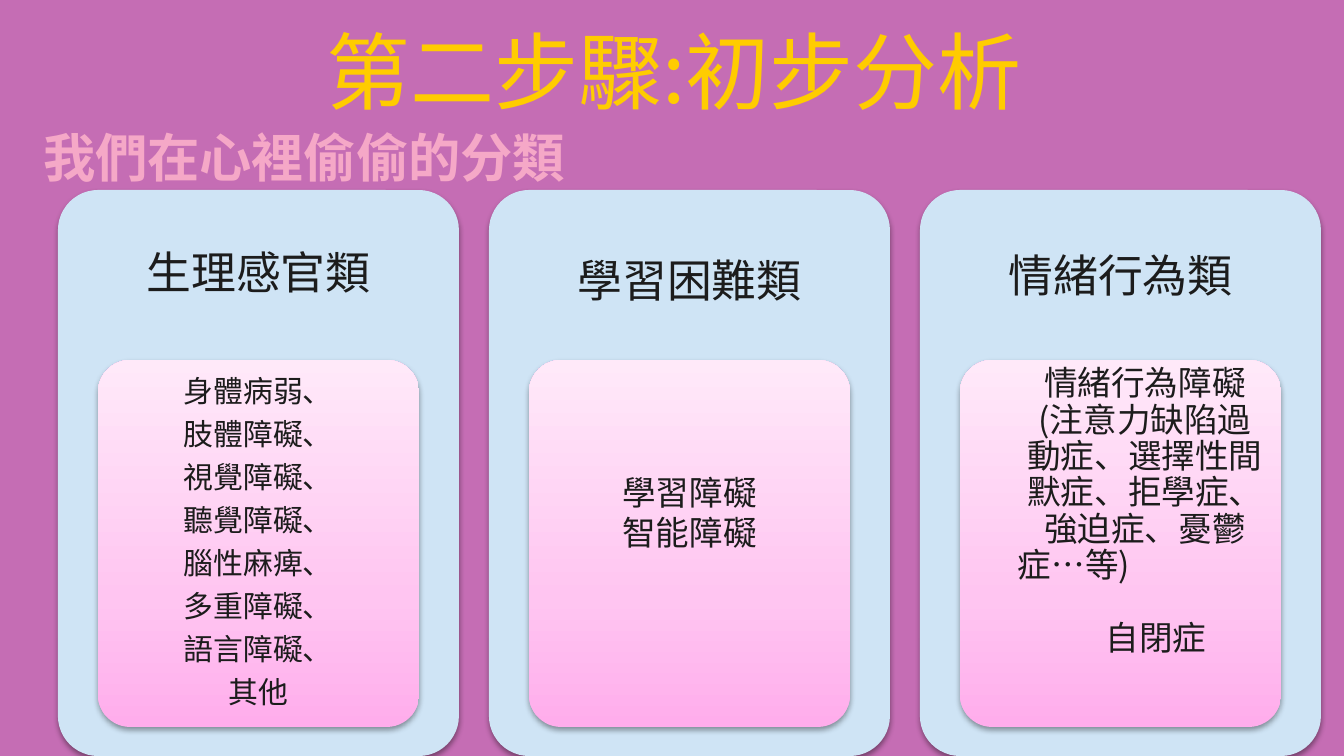
from copy import deepcopy

from lxml import etree
from pptx import Presentation
from pptx.dml.color import RGBColor
from pptx.enum.shapes import MSO_SHAPE
from pptx.enum.text import MSO_ANCHOR, MSO_AUTO_SIZE, PP_ALIGN
from pptx.oxml import parse_xml
from pptx.oxml.ns import qn
from pptx.util import Pt

ROUNDED = MSO_SHAPE.ROUNDED_RECTANGLE
TOP = MSO_ANCHOR.TOP
LEFT, CENTER = PP_ALIGN.LEFT, PP_ALIGN.CENTER

PX = 914400 / 134.4
FONT = "Noto Sans CJK SC"
INK = "1C1C1C"
SHADOW = (
    '<a:effectLst xmlns:a="http://schemas.openxmlformats.org/drawingml/2006/main">'
    '<a:outerShdw blurRad="39370" dist="20320" dir="5400000" rotWithShape="0">'
    '<a:srgbClr val="000000"><a:alpha val="38000"/></a:srgbClr>'
    '</a:outerShdw></a:effectLst>'
)


def px(*lengths):
    return [round(n * PX) for n in lengths]


def write(sp, lines, size, pitch, color=INK, align=CENTER, bold=False,
          wrap=True, left=0, top=0):
    """Fill a shape with paragraphs; pitch is the line height in points."""
    tf = sp.text_frame
    tf.word_wrap = wrap
    tf.auto_size = MSO_AUTO_SIZE.NONE
    tf.vertical_anchor = TOP
    tf.margin_left, tf.margin_top = px(left, top)
    tf.margin_right = tf.margin_bottom = 0
    tf.text = "\n".join(lines)
    for p in tf.paragraphs:
        p.alignment = align
        p.line_spacing = Pt(pitch)
        p.space_before = p.space_after = Pt(0)
        for r in p.runs:
            r.font.size = Pt(size)
            r.font.bold = bold
            r.font.name = FONT
            r.font.color.rgb = RGBColor.from_string(color)
            ea = etree.SubElement(r.font._element, qn("a:ea"))
            ea.set("typeface", FONT)
    return tf


prs = Presentation()
prs.slide_width, prs.slide_height = px(1344, 756)
s = prs.slides.add_slide(prs.slide_layouts[5])
s.background.fill.solid()
s.background.fill.fore_color.rgb = RGBColor.from_string("C56DB4")

# Title
title = s.shapes.title
title.left, title.top, title.width, title.height = px(69, 4, 1210, 138)
write(title, ["第二步驟:初步分析"], 45, 54, color="FFCC00", top=16)

# Cards: heading, its inset, body lines, body size, line height, insets
cards = [
    ("生理感官類", 54,
     ["身體病弱、", "肢體障礙、", "視覺障礙、", "聽覺障礙、",
      "腦性麻痺、", "多重障礙、", "語言障礙、", "其他"], 16, 23, 0, 0),
    ("學習困難類", 62, ["學習障礙", "智能障礙"], 18, 21.6, 0, 106),
    ("情緒行為類", 57,
     ["情緒行為障礙\v(注意力缺陷過\v動症、選擇性間\v默症、拒學症、\v強迫症、憂鬱",
      "症…等)", "自閉症"], 18, 19.5, 49, 0),
]
for i, (heading, drop, lines, size, pitch, left, top) in enumerate(cards):
    x = 58 + 431 * i
    card = s.shapes.add_shape(ROUNDED, *px(x, 190, 401, 566))
    card.fill.solid()
    card.fill.fore_color.rgb = RGBColor.from_string("CFE4F5")
    panel = s.shapes.add_shape(ROUNDED, *px(x + 40, 360, 321, 367))
    panel.fill.gradient()
    panel.fill.gradient_angle = 90
    gs_list = panel._element.spPr.find(".//" + qn("a:gsLst"))
    gs_list.append(deepcopy(gs_list[-1]))
    stops = [(0, "FFADEC"), (0.35, "FFC5F1"), (1, "FFE9F9")]
    for stop, (position, color) in zip(panel.fill.gradient_stops, stops):
        stop.position = position
        stop.color.rgb = RGBColor.from_string(color)
    for sp in (card, panel):
        sp.adjustments[0] = 0.1
        sp.line.fill.background()
        sp._element.spPr.append(parse_xml(SHADOW))

    box = s.shapes.add_textbox(*px(x, 190, 401, 170))
    write(box, [heading], 24, 29, top=drop)
    box = s.shapes.add_textbox(*px(x + 49, 366, 303, 352))
    body = write(box, lines, size, pitch, left=left, top=top)

# The last card closes its bracket at the left and sets 自閉症 apart
closing, last = body.paragraphs[1:]
closing.alignment = LEFT
last.space_before = Pt(19.5)
last._p.get_or_add_pPr().set("marL", str(px(22)[0]))

# Subtitle
box = s.shapes.add_textbox(*px(30, 113, 555, 77))
write(box, ["我們在心裡偷偷的分類"], 28, 34, color="F5A8C7", align=LEFT,
      bold=True, wrap=False, left=13, top=12)

prs.save("out.pptx")
